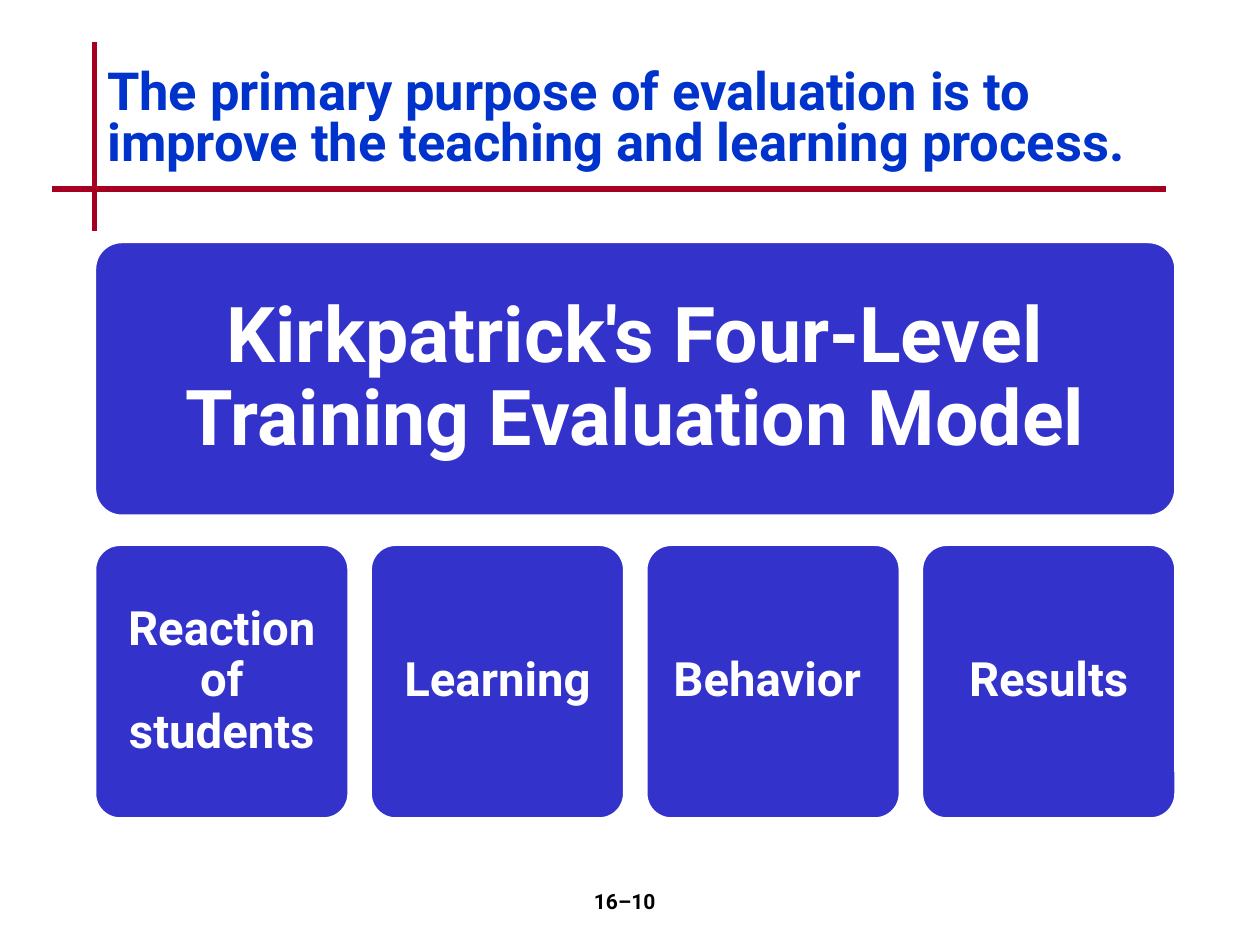
from lxml import etree
from pptx import Presentation
from pptx.dml.color import RGBColor
from pptx.enum.shapes import MSO_CONNECTOR, MSO_SHAPE
from pptx.enum.text import MSO_ANCHOR, MSO_AUTO_SIZE, PP_ALIGN
from pptx.oxml.ns import qn
from pptx.util import Pt

STRAIGHT = MSO_CONNECTOR.STRAIGHT
ROUNDED = MSO_SHAPE.ROUNDED_RECTANGLE
LEFT, CENTER = PP_ALIGN.LEFT, PP_ALIGN.CENTER
TOP, MIDDLE = MSO_ANCHOR.TOP, MSO_ANCHOR.MIDDLE
NO_FIT = MSO_AUTO_SIZE.NONE

COLORS = {
    "rule": "A50021",
    "title": "0033CC",
    "card": "3333CC",
    "white": "FFFFFF",
    "black": "000000",
}
FONT = "Roboto"
LEVELS = ["Reaction of students", "Learning", "Behavior ", "Results"]


def color(name):
    return RGBColor.from_string(COLORS[name])


def set_attributes(target, values):
    for name, value in values.items():
        setattr(target, name, value)


def write_text(shape, text, size, color_name, alignment=CENTER, anchor=MIDDLE,
               spacing=1.0, inset=None):
    frame = shape.text_frame
    frame.text = text
    set_attributes(frame, {"word_wrap": True, "auto_size": NO_FIT, "vertical_anchor": anchor})
    if inset is not None:
        for side in ("left", "top", "right", "bottom"):
            setattr(frame, f"margin_{side}", Pt(inset))
    paragraph = frame.paragraphs[0]
    set_attributes(paragraph, {"alignment": alignment, "line_spacing": spacing})
    font = paragraph.runs[0].font
    set_attributes(font, {"name": FONT, "size": Pt(size), "bold": True})
    font.color.rgb = color(color_name)


def add_rule(slide, x1, y1, x2, y2):
    rule = slide.shapes.add_connector(STRAIGHT, Pt(x1), Pt(y1), Pt(x2), Pt(y2))
    rule.line.width = Pt(3)
    rule.line.color.rgb = color("rule")
    etree.SubElement(rule._element.spPr, qn("a:effectLst"))


def add_header(slide, left, top, width, height):
    add_rule(slide, left, top, left, top + 108)
    add_rule(slide, left - 24, top + 84, left + width, top + 84)
    title = slide.shapes.title
    set_attributes(title, {"left": Pt(left), "top": Pt(top),
                           "width": Pt(width), "height": Pt(height)})
    write_text(title, "The primary purpose of evaluation is to improve the teaching "
               "and learning process.", 30, "title", alignment=LEFT, spacing=0.8)


def add_card(slide, left, top, width, height, text, size, inset):
    card = slide.shapes.add_shape(ROUNDED, Pt(left), Pt(top), Pt(width), Pt(height))
    card.adjustments[0] = 0.1
    card.shadow.inherit = False
    card.fill.solid()
    card.fill.fore_color.rgb = color("card")
    card.line.width = Pt(2)
    card.line.color.rgb = color("white")
    write_text(card, text, size, "white", spacing=0.9, inset=inset)


def add_model(slide, left, top, width, height):
    column_gap, row_gap = 12, 16
    card_height = (height - row_gap) / 2
    card_width = (width - column_gap * (len(LEVELS) - 1)) / len(LEVELS)
    add_card(slide, left, top, width, card_height,
             "Kirkpatrick's Four-Level Training Evaluation Model", 44, 13)
    for index, level in enumerate(LEVELS):
        add_card(slide, left + index * (card_width + column_gap),
                 top + card_height + row_gap, card_width, card_height, level, 27, 8)


def add_page_number(slide, left, top, width, height):
    box = slide.shapes.add_textbox(Pt(left), Pt(top), Pt(width), Pt(height))
    write_text(box, "16–10", 12, "black", anchor=TOP)


def main():
    presentation = Presentation()
    set_attributes(presentation, {"slide_width": Pt(720), "slide_height": Pt(540)})
    slide = presentation.slides.add_slide(presentation.slide_layouts[5])
    add_header(slide, 54, 24, 612, 90)
    add_model(slide, 54, 138, 618, 330)
    add_page_number(slide, 282, 504, 150, 36)
    presentation.save("out.pptx")


if __name__ == "__main__":
    main()
